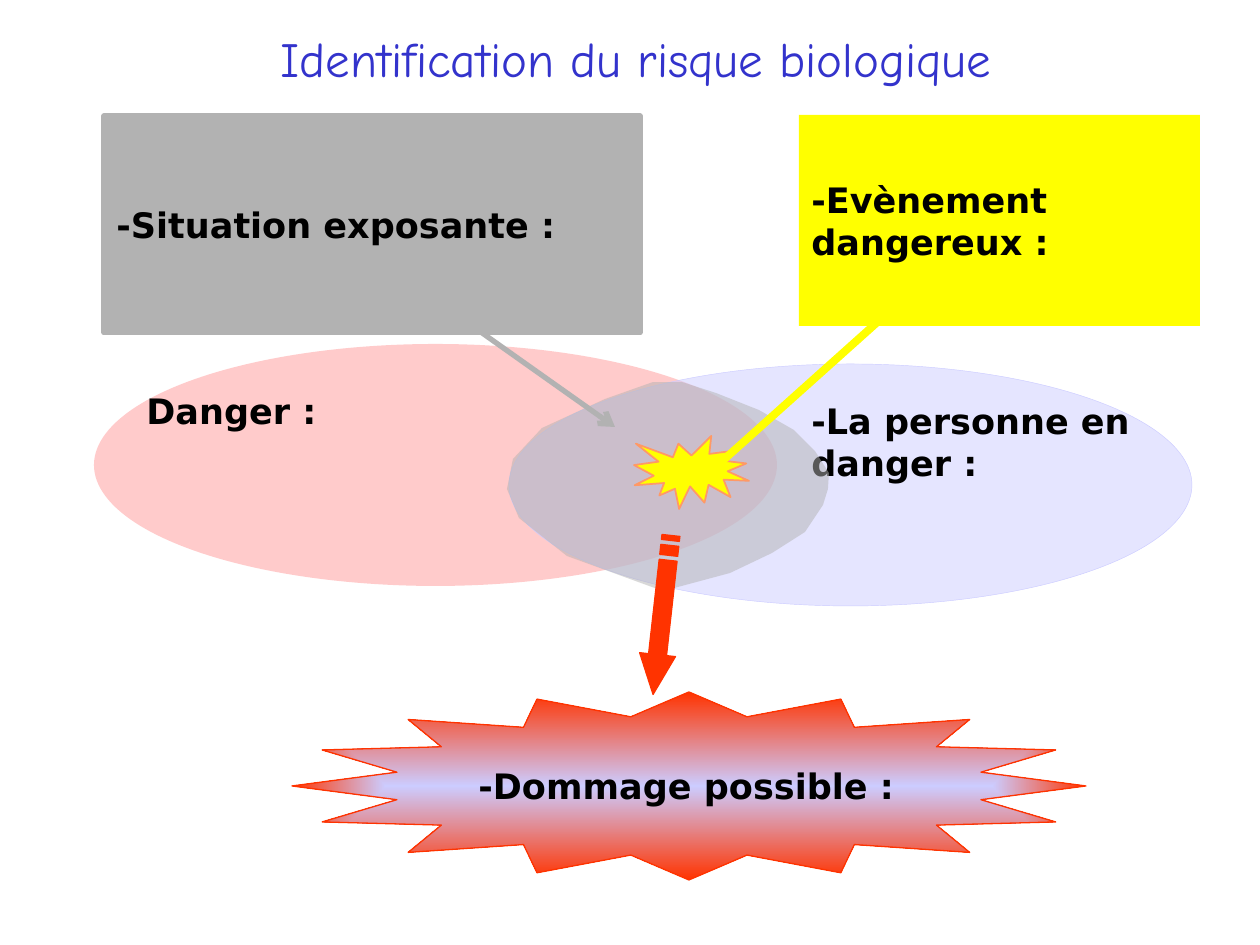
from lxml.etree import SubElement
from pptx import Presentation
from pptx.dml.color import RGBColor
from pptx.enum.shapes import MSO_CONNECTOR, MSO_SHAPE
from pptx.enum.text import MSO_ANCHOR, PP_ALIGN
from pptx.oxml import parse_xml
from pptx.oxml.ns import nsdecls, qn
from pptx.util import Emu, Pt

EMU_PER_PX = 914400 / 126
BLACK = RGBColor(0x00, 0x00, 0x00)
BLUE = RGBColor(0x33, 0x33, 0xCC)
PINK = RGBColor(0xFF, 0x99, 0x99)
LAVENDER = RGBColor(0xCC, 0xCC, 0xFF)
GRAY = RGBColor(0xB2, 0xB2, 0xB2)
RED = RGBColor(0xFF, 0x33, 0x00)
YELLOW = RGBColor(0xFF, 0xFF, 0x00)
ORANGE = RGBColor(0xFF, 0x99, 0x66)

EXPOSURE_ZONE = [
    (682, 382), (716, 393), (759, 410), (794, 430), (815, 451), (829, 473),
    (828, 489), (823, 505), (805, 532), (772, 553), (730, 573), (663, 591),
    (567, 556), (519, 518), (507, 489), (513, 459), (542, 428), (605, 399),
    (653, 382),
]


def px(length):
    return Emu(round(length * EMU_PER_PX))


def rectangle(left, top, right, bottom):
    return [(left, top), (right, top), (right, bottom), (left, bottom)]


class SlideBuilder:
    font_name = "DejaVu Sans"
    font_size = 20

    def __init__(self, slide):
        self.slide = slide

    def paint(self, shape, fill, line=None, line_width=1, opacity=100):
        shape.shadow.inherit = False
        shape.fill.solid()
        shape.fill.fore_color.rgb = fill
        if opacity < 100:
            color = shape._element.spPr.find(qn("a:solidFill"))[0]
            SubElement(color, qn("a:alpha"), val=str(opacity * 1000))
        if line is None:
            shape.line.fill.background()
        else:
            shape.line.color.rgb = line
            shape.line.width = Pt(line_width)
        return shape

    def shape(self, kind, box, fill, **style):
        shape = self.slide.shapes.add_shape(kind, *map(px, box))
        return self.paint(shape, fill, **style)

    def freeform(self, outlines, fill, **style):
        first, *others = outlines
        builder = self.slide.shapes.build_freeform(*first[0], scale=EMU_PER_PX)
        builder.add_line_segments(first[1:], close=True)
        for outline in others:
            builder.move_to(*outline[0])
            builder.add_line_segments(outline[1:], close=True)
        return self.paint(builder.convert_to_shape(), fill, **style)

    def label(self, shape, text, anchor=MSO_ANCHOR.MIDDLE, align=PP_ALIGN.LEFT,
              font_name=font_name, size=font_size, color=BLACK, bold=True):
        frame = shape.text_frame
        frame.word_wrap = True
        frame.vertical_anchor = anchor
        paragraph = frame.paragraphs[0]
        paragraph.text = text
        paragraph.alignment = align
        font = paragraph.font
        font.name, font.size, font.bold = font_name, Pt(size), bold
        font.color.rgb = color
        return frame

    def text(self, box, text, **style):
        self.label(self.slide.shapes.add_textbox(*map(px, box)), text, **style)

    def line(self, start, end, color, width, arrow=False):
        connector = self.slide.shapes.add_connector(
            MSO_CONNECTOR.STRAIGHT, *map(px, start + end))
        connector.line.color.rgb = color
        connector.line.width = Pt(width)
        properties = connector._element.spPr
        if arrow:
            SubElement(properties.find(qn("a:ln")), qn("a:tailEnd"), type="arrow")
        SubElement(properties, qn("a:effectLst"))

    def striped_arrow(self, left, top, length, height, rotation, color):
        """Draw an arrow with two stripes at its tail, then turn it."""
        unit = length // 32
        upper, middle, lower = (top + height * part // 4 for part in (1, 2, 3))
        body, neck = left + 5 * unit, left + 24 * unit
        arrow = [(body, upper), (neck, upper), (neck, top), (left + length, middle),
                 (neck, top + height), (neck, lower), (body, lower)]
        stripes = [rectangle(left + start * unit, upper, left + end * unit, lower)
                   for start, end in ((2, 4), (0, 1))]
        shape = self.freeform([arrow, *stripes], color, line=color, line_width=0.75)
        shape.rotation = rotation

    def radial_gradient(self, shape, center, edge):
        properties = shape._element.spPr
        gradient = parse_xml(
            f'<a:gradFill {nsdecls("a")} rotWithShape="1"><a:gsLst>'
            f'<a:gs pos="0"><a:srgbClr val="{center}"/></a:gs>'
            f'<a:gs pos="100000"><a:srgbClr val="{edge}"/></a:gs></a:gsLst>'
            '<a:path path="shape"><a:fillToRect l="50000" t="50000" r="50000" '
            'b="50000"/></a:path></a:gradFill>')
        properties.replace(properties.find(qn("a:solidFill")), gradient)


def main():
    presentation = Presentation()
    presentation.slide_width, presentation.slide_height = px(1260), px(945)
    slide = presentation.slides.add_slide(presentation.slide_layouts[6])
    builder = SlideBuilder(slide)

    builder.text((74, 16, 1124, 84), "Identification du risque biologique",
                 align=PP_ALIGN.CENTER, font_name="Comic Neue", size=28,
                 color=BLUE, bold=False)

    builder.shape(MSO_SHAPE.OVAL, (94, 344, 683, 242), PINK, opacity=50)
    builder.shape(MSO_SHAPE.OVAL, (509, 364, 683, 242), LAVENDER, opacity=50,
                  line=LAVENDER, line_width=0.25)
    builder.text((799, 393, 367, 97), "-La personne en danger :",
                 anchor=MSO_ANCHOR.TOP)
    builder.freeform([EXPOSURE_ZONE], GRAY, opacity=50)
    builder.line((461, 318), (615, 427), GRAY, 3, arrow=True)

    builder.striped_arrow(582, 597, 160, 36, 96.4, RED)
    damage = builder.shape(MSO_SHAPE.STAR_16_POINT, (292, 692, 794, 188), RED,
                           line=RED, line_width=0.75)
    damage.adjustments[0] = 0.375
    builder.radial_gradient(damage, LAVENDER, RED)
    frame = builder.label(damage, "-Dommage possible :")
    frame.word_wrap = False
    frame.margin_left = frame.margin_right = 0
    frame.margin_top = frame.margin_bottom = 0

    builder.shape(MSO_SHAPE.EXPLOSION1, (634, 436, 115, 73), YELLOW, line=ORANGE)
    event = builder.shape(MSO_SHAPE.RECTANGLE, (799, 115, 401, 211), YELLOW)
    builder.label(event, "-Evènement dangereux :")
    builder.line((719, 464), (882, 318), YELLOW, 4.5)
    situation = builder.shape(MSO_SHAPE.RECTANGLE, (104, 116, 536, 217), GRAY,
                              line=GRAY, line_width=3)
    builder.label(situation, "-Situation exposante :")
    builder.text((134, 383, 456, 55), "Danger :", anchor=MSO_ANCHOR.TOP)

    presentation.save("out.pptx")


if __name__ == "__main__":
    main()
